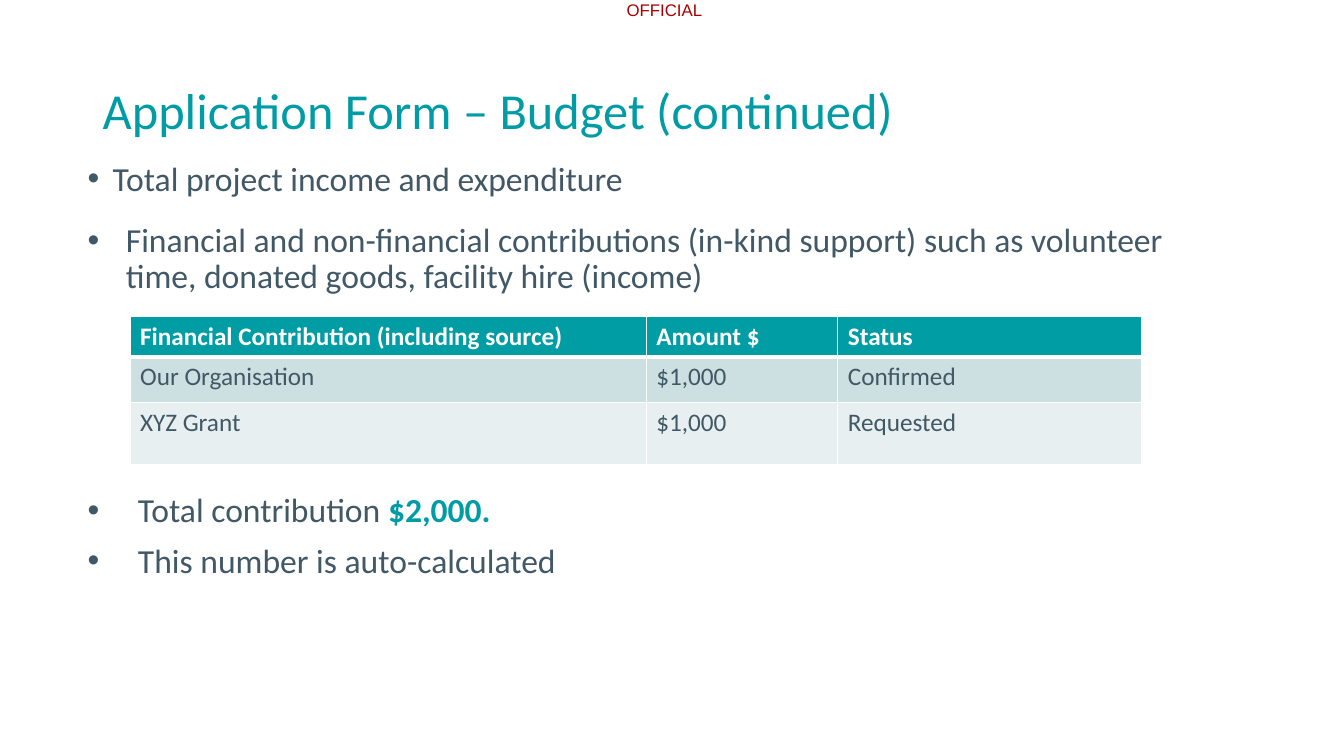
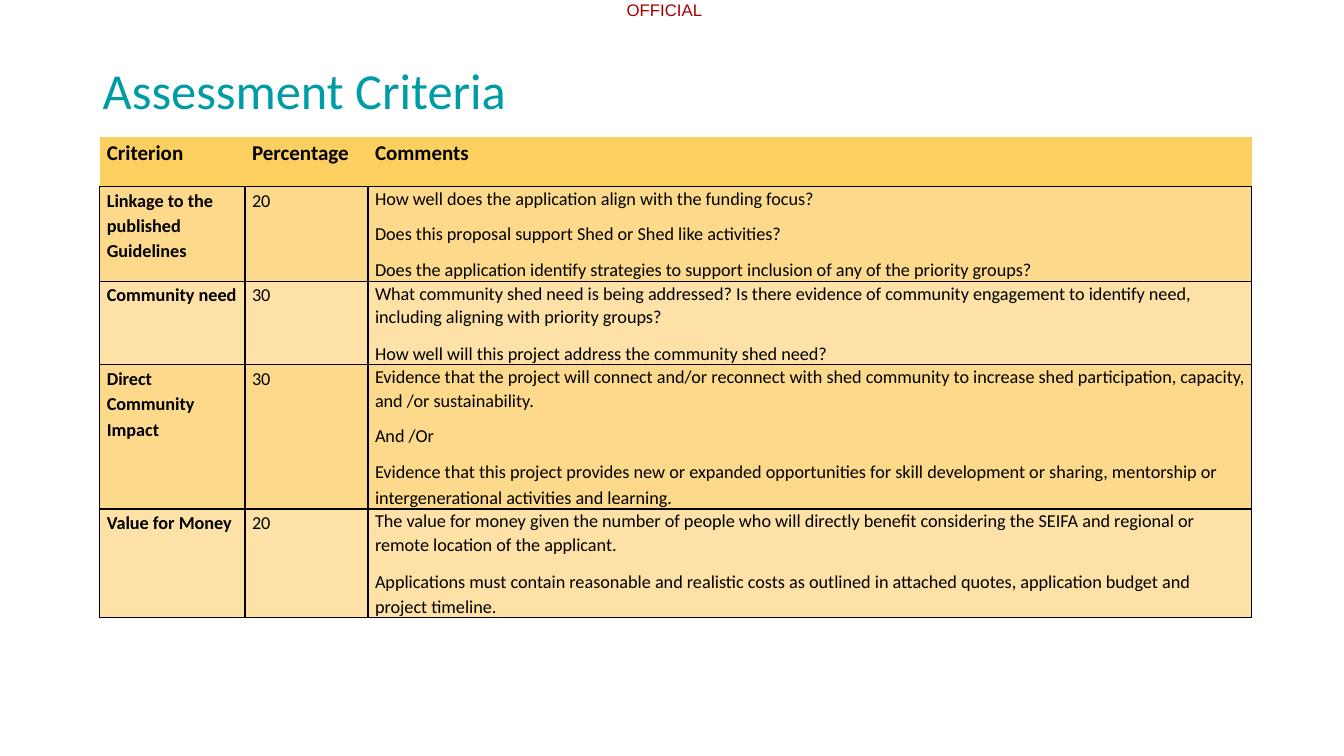
"""Builds two grant information slides: a budget page and the assessment criteria."""
from dataclasses import dataclass

from lxml import etree
from pptx import Presentation
from pptx import util as u
from pptx.dml.color import RGBColor
from pptx.enum import text
from pptx.oxml import ns


@dataclass(frozen=True)
class Theme:
    """Colours, fonts and type sizes."""
    teal: str = "009CA6"
    slate: str = "415866"
    marking: str = "A80000"
    white: str = "FFFFFF"
    black: str = "000000"
    header_teal: str = "009DA5"
    teal_bands: tuple = ("CCDFE1", "E7EFF0")
    header_gold: str = "FCCF61"
    gold_bands: tuple = ("FDDA8B", "FEE1A6")
    body_font: str = "Calibri"
    marking_font: str = "Arial"
    title_size: float = 36
    body_size: float = 24
    marking_size: float = 12
    budget_size: float = 18
    criteria_header_size: float = 15
    criteria_size: float = 13


class Deck:
    """Holds the style and the current slide."""

    def __init__(self, theme):
        """Start a widescreen presentation."""
        self.theme = theme
        self.presentation = Presentation()
        self.presentation.slide_width = u.Inches(13.33)
        self.presentation.slide_height = u.Inches(7.5)
        self.slide = None

    def new_slide(self, title, title_top, title_height):
        """Add a slide with its marking and title."""
        theme = self.theme
        self.slide = self.presentation.slides.add_slide(self.presentation.slide_layouts[6])
        marking = self.text_frame(6.19, 0, 0.8, 0.2)
        marking.margin_left = marking.margin_right = 0
        marking.margin_top = marking.margin_bottom = 0
        paragraph = marking.paragraphs[0]
        paragraph.alignment = text.PP_ALIGN.CENTER
        self.run(paragraph, "OFFICIAL", theme.marking_size, theme.marking,
                 font=theme.marking_font)
        heading = self.text_frame(0.92, title_top, 11.5, title_height)
        heading.vertical_anchor = text.MSO_ANCHOR.MIDDLE
        heading.paragraphs[0].line_spacing = 0.9
        self.run(heading.paragraphs[0], title, theme.title_size, theme.teal)

    def text_frame(self, left, top, width, height):
        """Add a wrapping text box and return its frame."""
        shape = self.slide.shapes.add_textbox(*map(u.Inches, (left, top, width, height)))
        shape.text_frame.word_wrap = True
        return shape.text_frame

    def run(self, paragraph, words, size, color, bold=False, font=None):
        """Add one styled run."""
        run = paragraph.add_run()
        run.text = words
        run.font.name = font or self.theme.body_font
        run.font.size = u.Pt(size)
        run.font.bold = bold
        run.font.color.rgb = RGBColor.from_string(color)

    def paragraphs(self, frame, count):
        """Return the first paragraph followed by new ones."""
        return [frame.paragraphs[0]] + [frame.add_paragraph() for _ in range(count - 1)]

    def bullets(self, left, top, width, height, items):
        """Add bullets given as indent, space before and (words, emphasis) runs."""
        frame = self.text_frame(left, top, width, height)
        for paragraph, (indent, space, runs) in zip(self.paragraphs(frame, len(items)), items):
            properties = paragraph._p.get_or_add_pPr()
            properties.set("marL", str(u.Inches(indent)))
            properties.set("indent", str(-u.Inches(indent)))
            etree.SubElement(properties, ns.qn("a:buFont"), typeface=self.theme.marking_font)
            etree.SubElement(properties, ns.qn("a:buChar"), char="•")
            paragraph.line_spacing = 0.9
            paragraph.space_before = u.Pt(space)
            for words, emphasis in runs:
                color = self.theme.teal if emphasis else self.theme.slate
                self.run(paragraph, words, self.theme.body_size, color, emphasis)

    def table(self, left, top, columns, rows):
        """Add an empty table with the given column widths and row heights."""
        frame = self.slide.shapes.add_table(
            len(rows), len(columns), u.Inches(left), u.Inches(top),
            u.Inches(sum(columns)), u.Inches(sum(rows)))
        for column, width in zip(frame.table.columns, columns):
            column.width = u.Inches(width)
        for row, height in zip(frame.table.rows, rows):
            row.height = u.Inches(height)
        return frame.table

    def cell(self, cell, fill, borders):
        """Set borders given as side to (colour, points), then the fill."""
        properties = cell._tc.get_or_add_tcPr()
        for side in "LRTB":
            color, points = borders[side]
            line = etree.SubElement(properties, ns.qn(f"a:ln{side}"), w=str(u.Pt(points)))
            solid = etree.SubElement(line, ns.qn("a:solidFill"))
            etree.SubElement(solid, ns.qn("a:srgbClr"), val=color)
        cell.fill.solid()
        cell.fill.fore_color.rgb = RGBColor.from_string(fill)

    def budget_table(self, left, top, columns, rows, records):
        """Add the teal table of contributions."""
        theme = self.theme
        table = self.table(left, top, columns, rows)
        for i, record in enumerate(records):
            header = i == 0
            borders = dict.fromkeys("LRTB", (theme.white, 1))
            if header:
                borders["B"] = (theme.white, 3)
            elif i == 1:
                borders["T"] = (theme.white, 3)
            fill = theme.header_teal if header else theme.teal_bands[(i - 1) % 2]
            color = theme.white if header else theme.slate
            for j, words in enumerate(record):
                cell = table.cell(i, j)
                self.cell(cell, fill, borders)
                self.run(cell.text_frame.paragraphs[0], words, theme.budget_size, color, header)

    def criteria_table(self, left, top, columns, rows, records):
        """Add the gold table; each cell is a list of paragraphs."""
        theme = self.theme
        table = self.table(left, top, columns, rows)
        for i, record in enumerate(records):
            header = i == 0
            borders = dict.fromkeys("LRTB", (theme.black, 1))
            if header:
                borders.update(dict.fromkeys("LRT", (theme.header_gold, 0.5)))
            fill = theme.header_gold if header else theme.gold_bands[(i - 1) % 2]
            size = theme.criteria_header_size if header else theme.criteria_size
            for j, lines in enumerate(record):
                cell = table.cell(i, j)
                self.cell(cell, fill, borders)
                cell.margin_left = cell.margin_right = u.Inches(0.07)
                cell.margin_top = cell.margin_bottom = 0
                paragraphs = self.paragraphs(cell.text_frame, len(lines))
                for paragraph, words in zip(paragraphs, lines):
                    paragraph.line_spacing = 1.15 if words == lines[-1] else 1.07
                    paragraph.space_after = u.Pt(8)
                    self.run(paragraph, words, size, theme.black, header or j == 0)
        table.cell(len(rows) - 1, len(columns) - 1).vertical_anchor = text.MSO_ANCHOR.MIDDLE


def budget_slide(deck):
    """Build the budget slide."""
    deck.new_slide("Application Form – Budget (continued)", 0.4, 1.45)
    deck.bullets(0.77, 1.56, 11.5, 1.5, [
        (0.25, 0, [("Total project income and expenditure", False)]),
        (0.38, 18, [("Financial and non-financial contributions (in-kind support) such as "
                     "volunteer time, donated goods, facility hire (income)", False)]),
    ])
    deck.budget_table(1.29, 3.14, [5.12, 1.9, 3.01], [0.38, 0.45, 0.62], [
        ["Financial Contribution (including source)", "Amount $", "Status"],
        ["Our Organisation", "$1,000", "Confirmed"],
        ["XYZ Grant", "$1,000", "Requested"],
    ])
    deck.bullets(0.77, 4.85, 11.5, 1.34, [
        (0.5, 0, [("Total contribution ", False), ("$2,000.", True)]),
        (0.5, 10, [("This number is auto-calculated", False)]),
    ])


def criteria_slide(deck):
    """Build the assessment criteria slide."""
    deck.new_slide("Assessment Criteria", 0, 1.85)
    deck.criteria_table(0.99, 1.36, [1.44, 1.22, 8.76], [0.49, 0.94, 0.83, 1.43, 1.08], [
        [["Criterion"], ["Percentage"], ["Comments"]],
        [["Linkage to the published Guidelines"], ["20"], [
            "How well does the application align with the funding focus?",
            "Does this proposal support Shed or Shed like activities?",
            "Does the application identify strategies to support inclusion of any of the "
            "priority groups?"]],
        [["Community need"], ["30"], [
            "What community shed need is being addressed? Is there evidence of community "
            "engagement to identify need, including aligning with priority groups?",
            "How well will this project address the community shed need?"]],
        [["Direct Community Impact"], ["30"], [
            "Evidence that the project will connect and/or reconnect with shed community to "
            "increase shed participation, capacity, and /or sustainability.",
            "And /Or",
            "Evidence that this project provides new or expanded opportunities for skill "
            "development or sharing, mentorship or intergenerational activities and learning."]],
        [["Value for Money"], ["20"], [
            "The value for money given the number of people who will directly benefit "
            "considering the SEIFA and regional or remote location of the applicant.",
            "Applications must contain reasonable and realistic costs as outlined in attached "
            "quotes, application budget and project timeline."]],
    ])


def main():
    """Build and save the slides."""
    deck = Deck(Theme())
    budget_slide(deck)
    criteria_slide(deck)
    deck.presentation.save("out.pptx")


if __name__ == "__main__":
    main()
